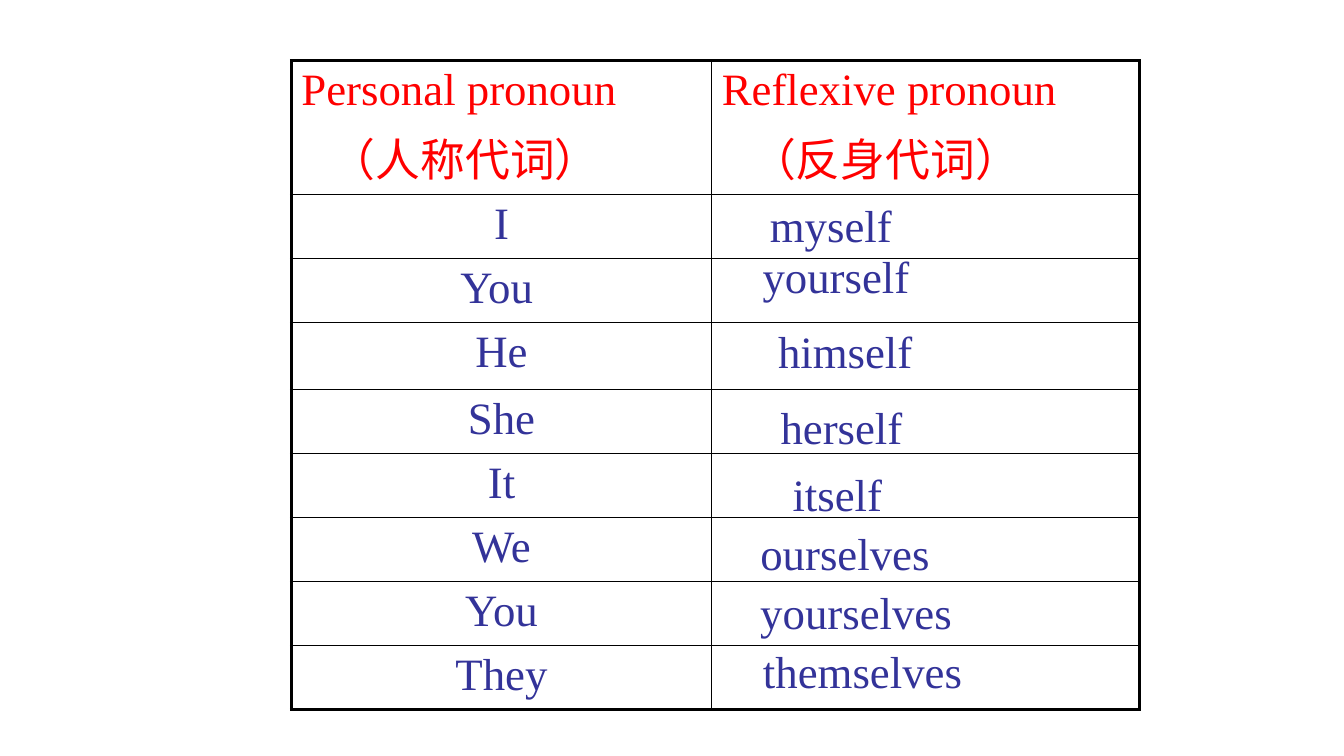
from dataclasses import dataclass

from lxml.etree import SubElement
from pptx import Presentation
from pptx.dml.color import RGBColor
from pptx.enum.text import MSO_AUTO_SIZE, PP_ALIGN
from pptx.oxml.ns import qn
from pptx.table import _Cell
from pptx.text.text import _Paragraph
from pptx.util import Pt

RED = RGBColor(0xFF, 0x00, 0x00)
BLUE = RGBColor(0x33, 0x33, 0x99)
BLACK = RGBColor(0x00, 0x00, 0x00)
FONT = "Times New Roman"
SIZE = 32
THIN, THICK = 1, 2.25
HEADER_INDENT = 21
SPACE_BEFORE = 6.4
SINGULAR_YOU_ROW = 2
SINGULAR_YOU_MARGIN = 14.2


@dataclass
class Answer:
    text: str
    left: float
    top: float
    width: float


HEADERS = ["Personal pronoun\n（人称代词）", "Reflexive pronoun\n（反身代词）"]
PRONOUNS = ["I", "You", "He", "She", "It", "We", "You", "They"]
COLUMN_WIDTHS = [300.3, 305.5]
HEADER_HEIGHT, ROW_HEIGHT, HE_HEIGHT = 91.4, 45.7, 48
ANSWERS = [
    Answer("myself", 542, 137.6, 103),
    Answer("yourself", 537.1, 174.2, 120.2),
    Answer("himself", 545.8, 227.6, 115.9),
    Answer("herself", 546, 282.2, 110.2),
    Answer("itself", 558.2, 329.8, 79.9),
    Answer("ourselves", 535.2, 372.2, 136.8),
    Answer("yourselves", 535.2, 414, 152.6),
    Answer("themselves", 537, 456.4, 158.4),
]


def format_paragraph(p: _Paragraph, color: RGBColor, align: PP_ALIGN) -> None:
    p.alignment = align
    for r in p.runs:
        r.font.name = FONT
        r.font.size = Pt(SIZE)
        r.font.color.rgb = color


def add_border(cell: _Cell, side: str, width: float) -> None:
    line = SubElement(cell._tc.get_or_add_tcPr(), qn(f"a:ln{side}"), w=str(Pt(width)))
    fill = SubElement(line, qn("a:solidFill"))
    SubElement(fill, qn("a:srgbClr"), val=str(BLACK))


def add_pronoun_table(s) -> None:
    rows = len(PRONOUNS) + 1
    heights = [HEADER_HEIGHT] + [HE_HEIGHT if t == "He" else ROW_HEIGHT for t in PRONOUNS]
    frame = s.shapes.add_table(
        rows, 2, Pt(208.1), Pt(43.2), Pt(sum(COLUMN_WIDTHS)), Pt(sum(heights)))
    table = frame.table
    table.horz_banding = table.first_row = False
    for column, width in zip(table.columns, COLUMN_WIDTHS):
        column.width = Pt(width)
    for row, height in zip(table.rows, heights):
        row.height = Pt(height)

    for i in range(rows):
        for j in range(2):
            cell = table.cell(i, j)
            add_border(cell, "L", THICK if j == 0 else THIN)
            add_border(cell, "R", THICK if j == 1 else THIN)
            add_border(cell, "T", THICK if i == 0 else THIN)
            add_border(cell, "B", THICK if i == rows - 1 else THIN)
            cell.fill.background()

    for j, header in enumerate(HEADERS):
        tf = table.cell(0, j).text_frame
        tf.text = header
        for p in tf.paragraphs:
            format_paragraph(p, RED, PP_ALIGN.LEFT)
        chinese = tf.paragraphs[1]
        chinese.space_before = Pt(SPACE_BEFORE)
        chinese._p.get_or_add_pPr().set("marL", str(Pt(HEADER_INDENT)))
    for i, pronoun in enumerate(PRONOUNS, 1):
        tf = table.cell(i, 0).text_frame
        tf.text = pronoun
        format_paragraph(tf.paragraphs[0], BLUE, PP_ALIGN.CENTER)
    table.cell(SINGULAR_YOU_ROW, 0).margin_right = Pt(SINGULAR_YOU_MARGIN)


def add_answer(s, answer: Answer) -> None:
    sp = s.shapes.add_textbox(Pt(answer.left), Pt(answer.top), Pt(answer.width), Pt(46))
    tf = sp.text_frame
    tf.word_wrap = False
    tf.auto_size = MSO_AUTO_SIZE.SHAPE_TO_FIT_TEXT
    tf.text = answer.text
    format_paragraph(tf.paragraphs[0], BLUE, PP_ALIGN.CENTER)


def main() -> None:
    prs = Presentation()
    prs.slide_width, prs.slide_height = Pt(960), Pt(540)
    s = prs.slides.add_slide(prs.slide_layouts[6])
    add_pronoun_table(s)
    for answer in ANSWERS:
        add_answer(s, answer)
    prs.save("out.pptx")


if __name__ == "__main__":
    main()
